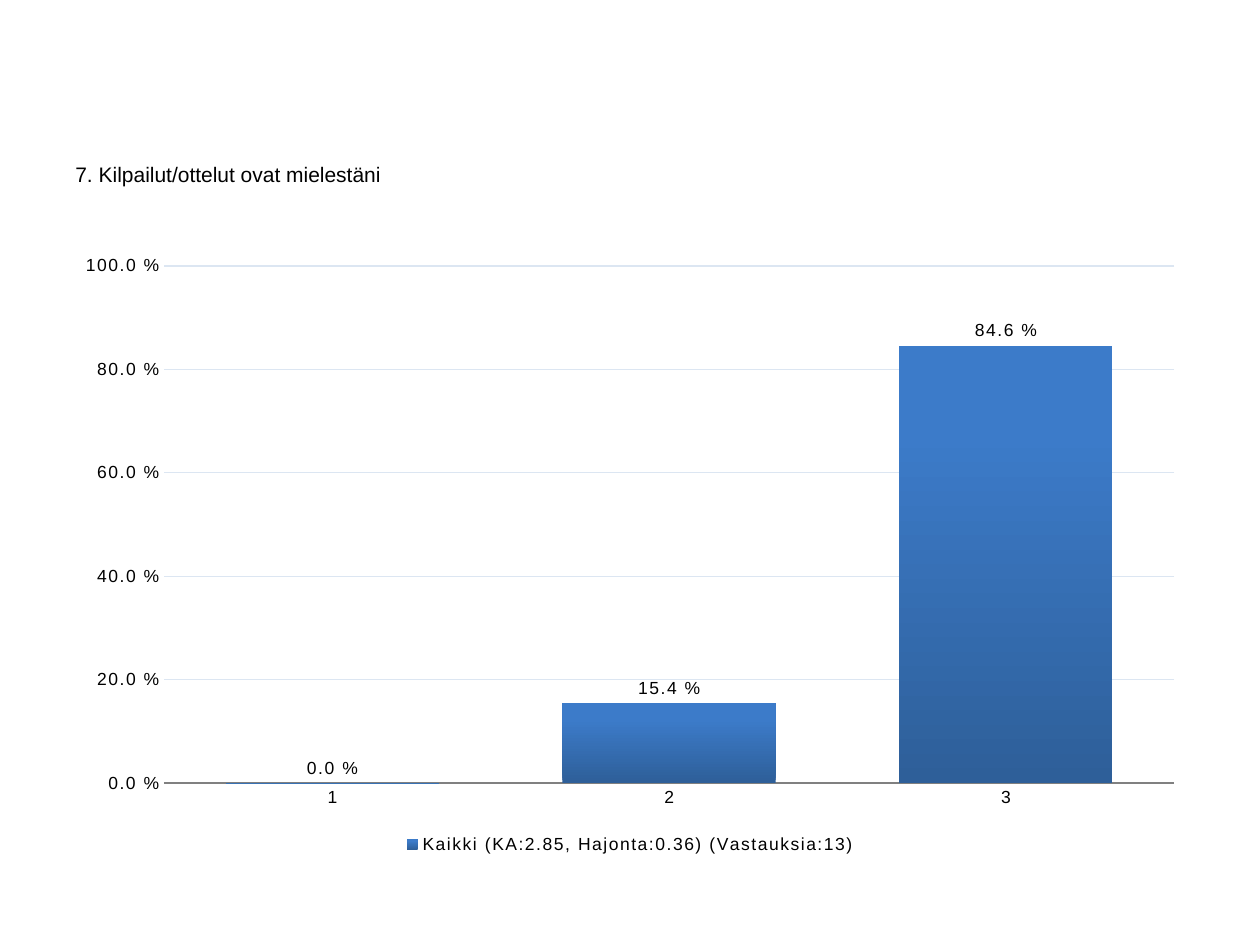
from lxml.etree import SubElement
from pptx import Presentation
from pptx.chart.data import CategoryChartData
from pptx.dml.color import RGBColor
from pptx.enum.chart import XL_CHART_TYPE, XL_LABEL_POSITION, XL_LEGEND_POSITION, XL_TICK_MARK
from pptx.oxml.ns import qn
from pptx.util import Pt

# Content
HEADING = "7. Kilpailut/ottelut ovat mielestäni"
SERIES = "Kaikki (KA:2.85, Hajonta:0.36) (Vastauksia:13)"
SHARES = {"1": 0, "2": 0.154, "3": 0.846}

# Look
COLORS = {"text": "000000", "grid": "DCE6F2", "axis": "808080",
          "bar_bottom": "2E5F99", "bar_top": "3C7BC9"}
PERCENT = "0.0\\ %"
LETTER_SPACING = "100"  # hundredths of a point
HEADING_BOX = (36, 88.5, 648, 42.5)
CHART_BOX = (36, 139.7, 648, 351.4)
PLOT_BOX = (93.7, 152, 577.3, 295.4)
VALUE_AXIS = {"minimum_scale": 0, "maximum_scale": 1, "major_unit": 0.2,
              "has_major_gridlines": True}


def color(name):
    return RGBColor.from_string(COLORS[name])


def set_font(font, size):
    for key, value in {"name": "Arial", "size": Pt(size), "bold": False}.items():
        setattr(font, key, value)
    font.color.rgb = color("text")


def set_chart_font(part):
    set_font(part.font, 10)
    for props in part._element.iter(qn("a:defRPr")):
        props.set("spc", LETTER_SPACING)


def place_plot(chart):
    """Fix the inner plot area as fractions of the chart frame."""
    area = chart._chartSpace.chart.plotArea
    for old in area.findall(qn("c:layout")):
        area.remove(old)
    layout = SubElement(area, qn("c:layout"))
    area.insert(0, layout)
    manual = SubElement(layout, qn("c:manualLayout"))
    left, top, width, height = CHART_BOX
    x, y, w, h = PLOT_BOX
    settings = {"layoutTarget": "inner", "xMode": "edge", "yMode": "edge",
                "x": (x - left) / width, "y": (y - top) / height,
                "w": w / width, "h": h / height}
    for tag, value in settings.items():
        text = value if isinstance(value, str) else f"{value:.3f}"
        SubElement(manual, qn(f"c:{tag}")).set("val", text)


def add_heading(page):
    box = page.shapes.add_textbox(*map(Pt, HEADING_BOX))
    box.text_frame.word_wrap = True
    para = box.text_frame.paragraphs[0]
    para.space_before = Pt(2.4)
    span = para.add_run()
    span.text = HEADING
    set_font(span.font, 12)


def add_share_chart(page):
    data = CategoryChartData(number_format=PERCENT)
    data.categories = list(SHARES)
    data.add_series(SERIES, list(SHARES.values()))
    chart = page.shapes.add_chart(
        XL_CHART_TYPE.COLUMN_CLUSTERED, *map(Pt, CHART_BOX), data).chart
    chart.has_title = False
    set_font(chart.font, 10)
    place_plot(chart)

    # Axes
    values, categories = chart.value_axis, chart.category_axis
    for key, value in VALUE_AXIS.items():
        setattr(values, key, value)
    for axis in (values, categories):
        axis.major_tick_mark = axis.minor_tick_mark = XL_TICK_MARK.NONE
        set_chart_font(axis.tick_labels)
    values.tick_labels.number_format = PERCENT
    values.tick_labels.number_format_is_linked = False
    values.format.line.fill.background()
    for line, name in ((values.major_gridlines.format.line, "grid"),
                       (categories.format.line, "axis")):
        line.color.rgb = color(name)
        line.width = Pt(0.75)

    # Bars and their labels
    plot = chart.plots[0]
    plot.gap_width = 58
    plot.vary_by_categories = False
    bars = plot.series[0]
    fill = bars.format.fill
    fill.gradient()
    fill.gradient_angle = 90
    stops = (("bar_bottom", 0), ("bar_top", 0.8))
    for stop, (name, position) in zip(fill.gradient_stops, stops):
        stop.color.rgb = color(name)
        stop.position = position
    labels = bars.data_labels
    label_format = {"show_value": True, "number_format": PERCENT,
                    "number_format_is_linked": False,
                    "position": XL_LABEL_POSITION.OUTSIDE_END}
    for key, value in label_format.items():
        setattr(labels, key, value)
    set_chart_font(labels)

    # Legend
    chart.has_legend = True
    chart.legend.position = XL_LEGEND_POSITION.BOTTOM
    chart.legend.include_in_layout = False
    set_chart_font(chart.legend)


def main():
    deck = Presentation()
    deck.slide_width, deck.slide_height = Pt(720), Pt(540)
    page = deck.slides.add_slide(deck.slide_layouts[6])
    add_heading(page)
    add_share_chart(page)
    deck.save("out.pptx")


if __name__ == "__main__":
    main()
